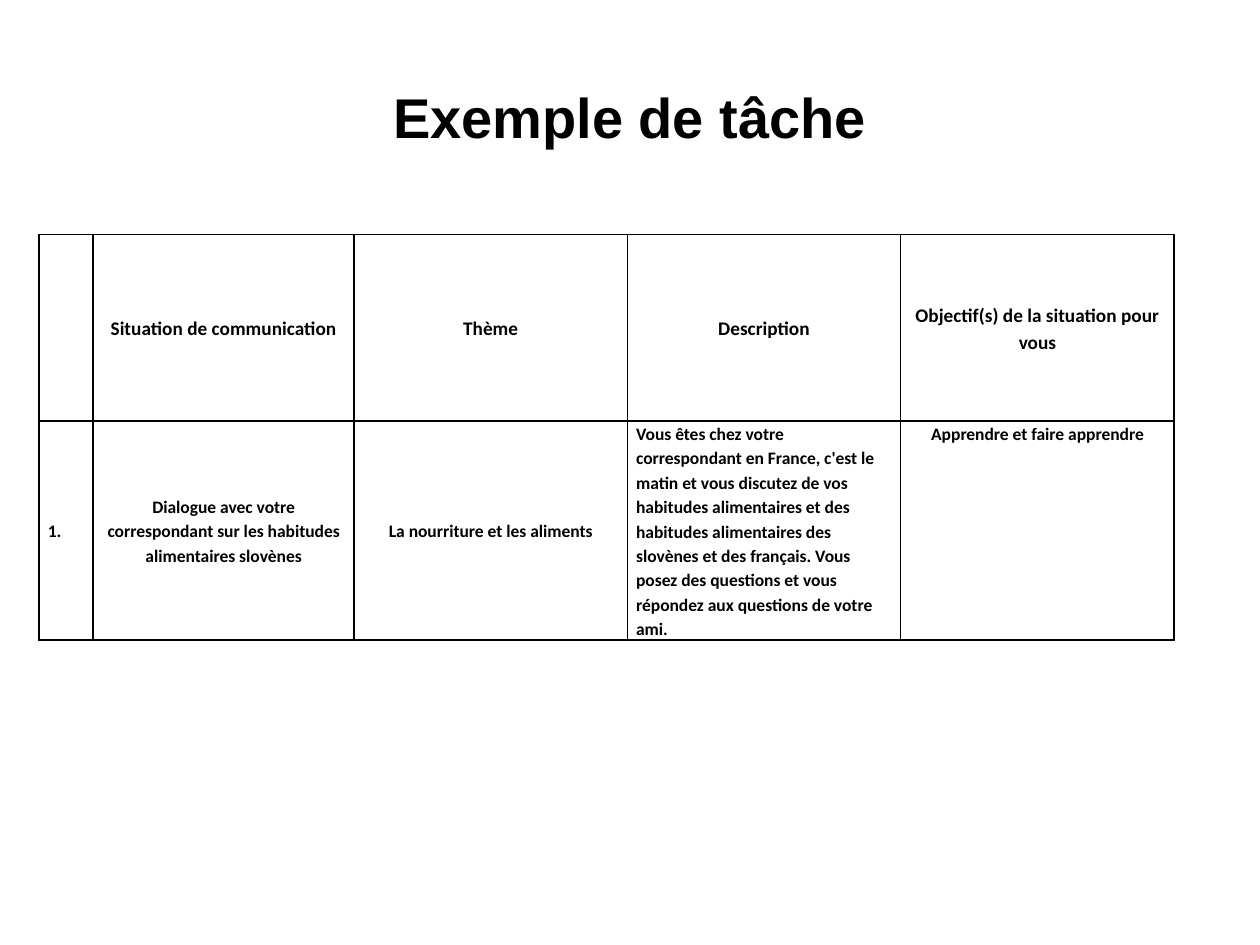
from lxml import etree
from pptx import Presentation
from pptx import util as u
from pptx.dml.color import RGBColor
from pptx.enum import text
from pptx.oxml.ns import qn

TITLE = "Exemple de tâche"
INK = "000000"
LEFT, MIDDLE = text.PP_ALIGN.LEFT, text.MSO_ANCHOR.MIDDLE
CENTER, TOP = text.PP_ALIGN.CENTER, text.MSO_ANCHOR.TOP

HEADINGS = ["", "Situation de communication", "Thème", "Description",
            "Objectif(s) de la situation pour vous"]
TASK = [
    "1.",
    "Dialogue avec votre correspondant sur les habitudes alimentaires slovènes",
    "La nourriture et les aliments",
    "Vous êtes chez votre correspondant en France, c'est le matin et vous "
    "discutez de vos habitudes alimentaires et des habitudes alimentaires des "
    "slovènes et des français. Vous posez des questions et vous répondez aux "
    "questions de votre ami.",
    "Apprendre et faire apprendre",
]
TASK_LAYOUT = [(LEFT, MIDDLE), (CENTER, MIDDLE), (CENTER, MIDDLE),
               (LEFT, TOP), (CENTER, TOP)]

# words, text size, (alignment, anchor) by column, row height
ROWS = [
    (HEADINGS, 11, [(CENTER, MIDDLE)] * len(HEADINGS), 1.48),
    (TASK, 10, TASK_LAYOUT, 1.74),
]
COLUMNS = [0.43, 2.07] + [2.17] * 3


def color(value):
    return RGBColor.from_string(value)


def write(paragraph, words, font_name, size, align):
    paragraph.alignment = align
    run = paragraph.add_run()
    run.text = words
    run.font.name, run.font.size, run.font.bold = font_name, u.Pt(size), True
    run.font.color.rgb = color(INK)


def border(cell, width=1):
    """Put a solid line on all four sides; call before setting the fill."""
    properties = cell._tc.get_or_add_tcPr()
    for side in ("a:lnL", "a:lnR", "a:lnT", "a:lnB"):
        line = etree.SubElement(properties, qn(side), w=str(u.Pt(width)))
        solid = etree.SubElement(line, qn("a:solidFill"))
        etree.SubElement(solid, qn("a:srgbClr"), val=INK)


def add_title(slide):
    box = slide.shapes.add_textbox(*map(u.Inches, (0.5, 0.3, 9, 1.25)))
    frame = box.text_frame
    frame.word_wrap = True
    frame.vertical_anchor = MIDDLE
    write(frame.paragraphs[0], TITLE, "Arial", 32, CENTER)


def add_task_table(slide):
    height = sum(row[-1] for row in ROWS)
    table = slide.shapes.add_table(
        len(ROWS), len(COLUMNS),
        *map(u.Inches, (0.31, 1.86, sum(COLUMNS), height))).table
    table.first_row = table.horz_banding = False
    for column, width in zip(table.columns, COLUMNS):
        column.width = u.Inches(width)
    for row, (words, size, layout, row_height) in zip(table.rows, ROWS):
        row.height = u.Inches(row_height)
        for cell, content, (align, anchor) in zip(row.cells, words, layout):
            border(cell)
            cell.fill.background()
            cell.margin_left = cell.margin_right = u.Inches(0.07)
            cell.margin_top = cell.margin_bottom = 0
            cell.vertical_anchor = anchor
            if content:
                paragraph = cell.text_frame.paragraphs[0]
                paragraph.line_spacing = 1.15
                write(paragraph, content, "Calibri", size, align)


def main():
    deck = Presentation()
    deck.slide_width, deck.slide_height = u.Inches(10), u.Inches(7.5)
    slide = deck.slides.add_slide(deck.slide_layouts[6])
    add_title(slide)
    add_task_table(slide)
    deck.save("out.pptx")


if __name__ == "__main__":
    main()
